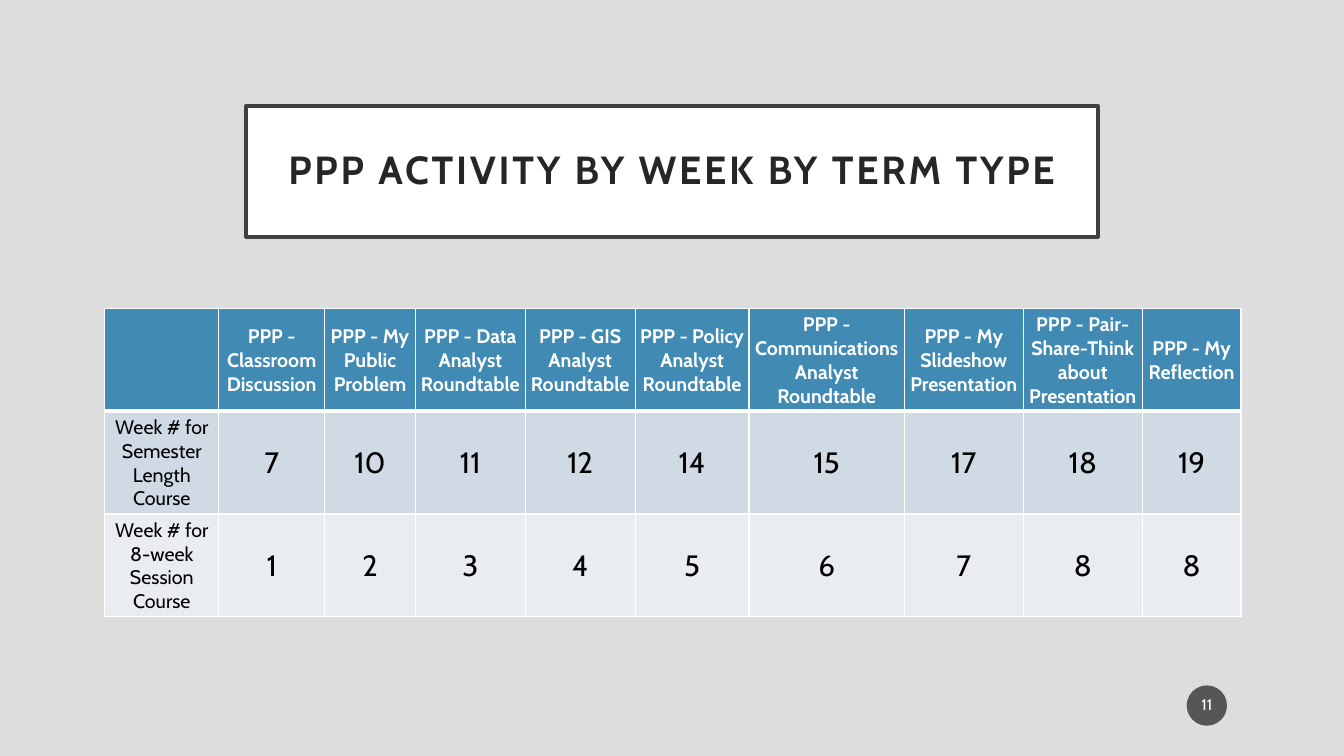
from lxml import etree
from pptx import Presentation
from pptx.dml.color import RGBColor
from pptx.enum.shapes import MSO_SHAPE
from pptx.enum.text import MSO_ANCHOR, MSO_AUTO_SIZE, PP_ALIGN
from pptx.oxml.ns import qn
from pptx.util import Inches, Pt

OVAL = MSO_SHAPE.OVAL
MIDDLE = MSO_ANCHOR.MIDDLE
NO_AUTOFIT = MSO_AUTO_SIZE.NONE
CENTER = PP_ALIGN.CENTER

FONT = "Cabin"
COLORS = {
    "background": "DDDDDD",
    "white": "FFFFFF",
    "black": "000000",
    "frame": "404040",
    "title": "262626",
    "badge": "1D1D1D",
    "header": "418AB3",
    "semester": "CFDAE5",
    "session": "E9EDF2",
}
COLUMN_WIDTHS = [1.13, 1.05, 0.9, 1.09, 1.09, 1.13, 1.54, 1.18, 1.18, 0.98]
ROW_HEIGHT = 1.02
ACTIVITIES = [
    "Classroom Discussion",
    "My Public Problem",
    "Data Analyst Roundtable",
    "GIS Analyst Roundtable",
    "Policy Analyst Roundtable",
    "Communications Analyst Roundtable",
    "My Slideshow Presentation",
    "Pair-Share-Think about Presentation",
    "My Reflection",
]
ROWS = [
    ("header", ["", *(f"PPP - {activity}" for activity in ACTIVITIES)]),
    ("semester", ["Week # for Semester Length Course", 7, 10, 11, 12, 14, 15, 17, 18, 19]),
    ("session", ["Week # for 8-week Session Course", 1, 2, 3, 4, 5, 6, 7, 8, 8]),
]


def color(name):
    return RGBColor.from_string(COLORS[name])


class ScheduleSlide:
    def __init__(self, presentation):
        self.slide = presentation.slides.add_slide(presentation.slide_layouts[5])
        background = self.slide.background.fill
        background.solid()
        background.fore_color.rgb = color("background")

    def place(self, shape, left, top, width, height):
        shape.left, shape.top = Inches(left), Inches(top)
        shape.width, shape.height = Inches(width), Inches(height)

    def paint(self, target, name):
        target.fill.solid()
        target.fill.fore_color.rgb = color(name)

    def set_text(self, frame, text, size, name, bold=False):
        frame.text = text
        paragraph = frame.paragraphs[0]
        paragraph.alignment = CENTER
        paragraph.font.name = FONT
        paragraph.font.size = Pt(size)
        paragraph.font.bold = bold
        paragraph.font.color.rgb = color(name)
        return paragraph

    def set_insets(self, frame, horizontal, vertical):
        frame.margin_left = frame.margin_right = Inches(horizontal)
        frame.margin_top = frame.margin_bottom = Inches(vertical)
        frame.vertical_anchor = MIDDLE
        frame.word_wrap = True
        frame.auto_size = NO_AUTOFIT

    def add_title(self, text):
        title = self.slide.shapes.title
        self.place(title, 2.44, 1.05, 8.45, 1.3)
        self.paint(title, "white")
        title.line.color.rgb = color("frame")
        title.line.width = Pt(2.5)
        self.set_insets(title.text_frame, 0.3, 0.2)
        paragraph = self.set_text(title.text_frame, text, 28, "title", bold=True)
        paragraph.line_spacing = 0.9
        paragraph.runs[0]._r.get_or_add_rPr().set("spc", "200")

    def add_page_badge(self, number):
        badge = self.slide.shapes.add_shape(
            OVAL, Inches(11.77), Inches(6.8), Inches(0.4), Inches(0.4)
        )
        badge.shadow.inherit = False
        self.paint(badge, "badge")
        badge_color = badge._element.spPr.find(qn("a:solidFill"))[0]
        etree.SubElement(badge_color, qn("a:alpha"), val="70000")
        badge.line.fill.background()
        self.set_insets(badge.text_frame, 0.02, 0.05)
        paragraph = self.set_text(badge.text_frame, number, 11, "white")
        paragraph.line_spacing = 0.9
        paragraph.space_after = Pt(6)

    def add_borders(self, cell, top, bottom):
        properties = cell._tc.get_or_add_tcPr()
        widths = {"lnL": 1, "lnR": 1, "lnT": top, "lnB": bottom}
        for position, (tag, width) in enumerate(widths.items()):
            line = etree.Element(qn(f"a:{tag}"), w=str(Pt(width)))
            solid = etree.SubElement(line, qn("a:solidFill"))
            etree.SubElement(solid, qn("a:srgbClr"), val=COLORS["white"])
            properties.insert(position, line)

    def add_cell(self, cell, value, row, column, fill_name):
        is_header = row == 0
        cell.margin_left = cell.margin_right = cell.margin_top = Inches(0.01)
        cell.margin_bottom = 0
        cell.vertical_anchor = MIDDLE
        self.paint(cell, fill_name)
        self.add_borders(cell, 3 if row == 1 else 1, 3 if is_header else 1)
        size = 14 if is_header or column == 0 else 21
        text_color = "white" if is_header else "black"
        self.set_text(cell.text_frame, str(value), size, text_color, bold=is_header)

    def add_schedule(self):
        table = self.slide.shapes.add_table(
            len(ROWS), len(COLUMN_WIDTHS), Inches(1.04), Inches(3.06),
            Inches(sum(COLUMN_WIDTHS)), Inches(ROW_HEIGHT * len(ROWS)),
        ).table
        for column, width in zip(table.columns, COLUMN_WIDTHS):
            column.width = Inches(width)
        for row, (fill_name, values) in enumerate(ROWS):
            table.rows[row].height = Inches(ROW_HEIGHT)
            for column, value in enumerate(values):
                self.add_cell(table.cell(row, column), value, row, column, fill_name)


def main():
    presentation = Presentation()
    presentation.slide_width = Inches(13.33)
    presentation.slide_height = Inches(7.5)
    schedule = ScheduleSlide(presentation)
    schedule.add_title("PPP ACTIVITY BY WEEK BY TERM TYPE")
    schedule.add_page_badge("11")
    schedule.add_schedule()
    presentation.save("out.pptx")


if __name__ == "__main__":
    main()
